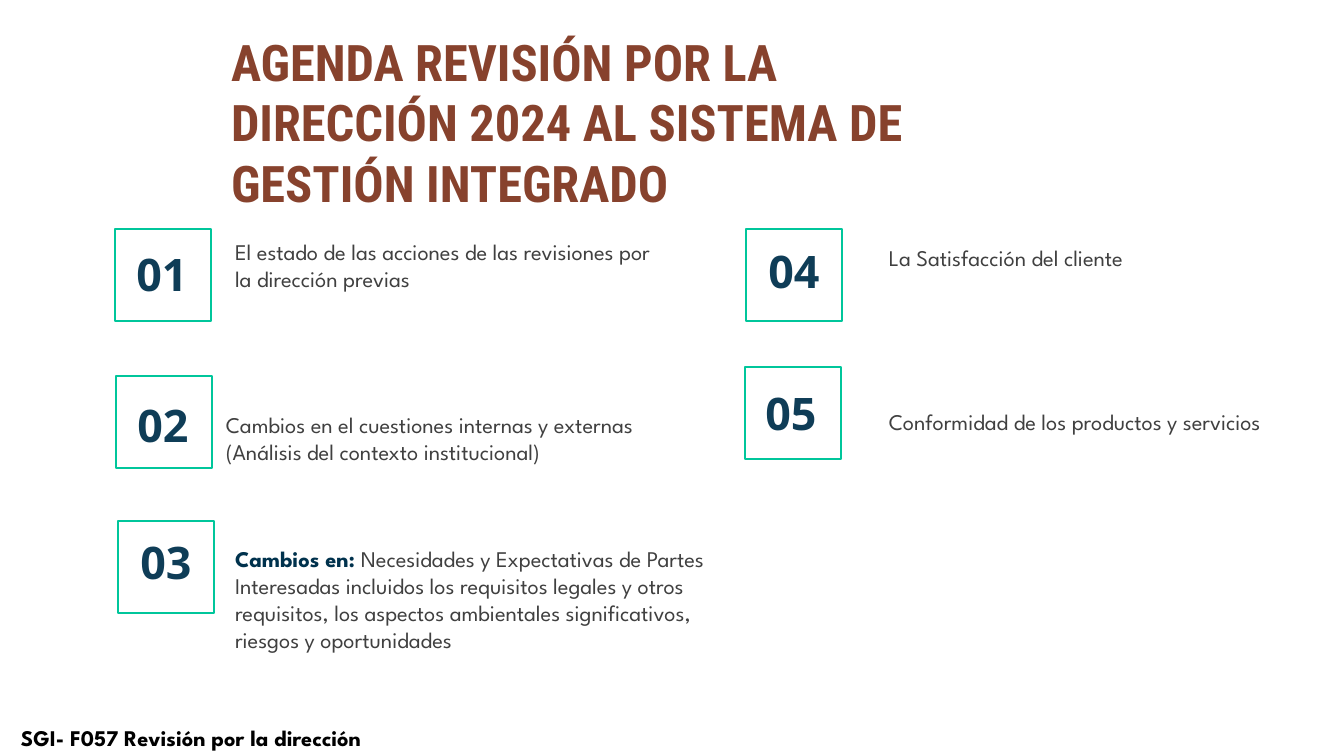
import pptx
import pptx.util
import pptx.dml.color
import pptx.enum.shapes
import pptx.enum.text

PX = 914400 / 100.8
COLORS = {"title": "87422D", "frame": "00C69B", "number": "0F3D57",
          "lead": "00324D", "body": "404040", "footer": "000000"}
ANCHOR = pptx.enum.text.MSO_ANCHOR
ALIGN = pptx.enum.text.PP_ALIGN


def px(n):
    return pptx.util.Emu(round(n * PX))


def rgb(name):
    return pptx.dml.color.RGBColor.from_string(COLORS[name])


def write(tf, runs, font="League Spartan", size=16, anchor=ANCHOR.BOTTOM,
          align=ALIGN.LEFT, inset=(5, 5)):
    """Fill a text frame with runs of (text, color, bold)."""
    tf.word_wrap = True
    tf.auto_size = pptx.enum.text.MSO_AUTO_SIZE.NONE
    tf.vertical_anchor = anchor
    tf.margin_left = tf.margin_right = px(inset[0])
    tf.margin_top = tf.margin_bottom = px(inset[1])
    p = tf.paragraphs[0]
    p.alignment = align
    for text, color, bold in runs:
        r = p.add_run()
        r.text = text
        r.font.name = font
        r.font.size = pptx.util.Pt(size)
        r.font.bold = bold
        r.font.color.rgb = rgb(color)


class Agenda:
    def __init__(self, prs):
        self.s = prs.slides.add_slide(prs.slide_layouts[5])

    def title(self, text, x, y, w, h):
        sp = self.s.shapes.title
        sp.left, sp.top, sp.width, sp.height = map(px, (x, y, w, h))
        write(sp.text_frame, [(text, "title", True)], font="Roboto Condensed",
              size=36, anchor=ANCHOR.TOP, inset=(10, 5))

    def text(self, runs, x, y, w, h, **style):
        sp = self.s.shapes.add_textbox(*map(px, (x, y, w, h)))
        write(sp.text_frame, runs, **style)

    def frame(self, x, y):
        sp = self.s.shapes.add_shape(pptx.enum.shapes.MSO_SHAPE.RECTANGLE,
                                     *map(px, (x, y, 96, 92)))
        sp.shadow.inherit = False
        sp.fill.background()
        sp.line.color.rgb = rgb("frame")
        sp.line.width = pptx.util.Pt(1.5)

    def number(self, n, x, y):
        self.text([(f"{n:02}", "number", True)], x, y, 86, 86, font="Open Sans",
                  size=32, anchor=ANCHOR.MIDDLE, align=ALIGN.CENTER, inset=(10, 5))


# Agenda points: frame corner, number corner, text box, runs
POINTS = [
    ((115, 229), (119, 231), (230, 233, 428, 64),
     [("El estado de las acciones de las revisiones por la dirección previas", "body", False)]),
    ((116, 376), (120, 382), (221, 378, 424, 92),
     [("Cambios en el cuestiones internas y externas (Análisis del contexto institucional)",
       "body", False)]),
    ((118, 521), (123, 519), (230, 512, 488, 146),
     [("Cambios en: ", "lead", True),
      ("Necesidades y Expectativas de Partes Interesadas incluidos los requisitos legales "
       "y otros requisitos, los aspectos ambientales significativos, riesgos y oportunidades",
       "body", False)]),
    ((746, 229), (751, 228), (884, 239, 340, 37),
     [("La Satisfacción del cliente", "body", False)]),
    ((745, 367), (748, 370), (884, 376, 402, 64),
     [("Conformidad de los productos y servicios", "body", False)]),
]


def main():
    prs = pptx.Presentation()
    prs.slide_width, prs.slide_height = px(1344), px(756)
    agenda = Agenda(prs)

    # Title
    agenda.title("AGENDA REVISIÓN POR LA DIRECCIÓN 2024 AL SISTEMA DE GESTIÓN INTEGRADO",
                 221, 26, 792, 190)

    # Numbered points
    for n, (frame, number, box, runs) in enumerate(POINTS, 1):
        agenda.frame(*frame)
        agenda.number(n, *number)
        agenda.text(runs, *box)

    # Footer
    agenda.text([("SGI- F057 Revisión por la dirección", "footer", True)], 16, 719, 484, 37)
    prs.save("out.pptx")


if __name__ == "__main__":
    main()
